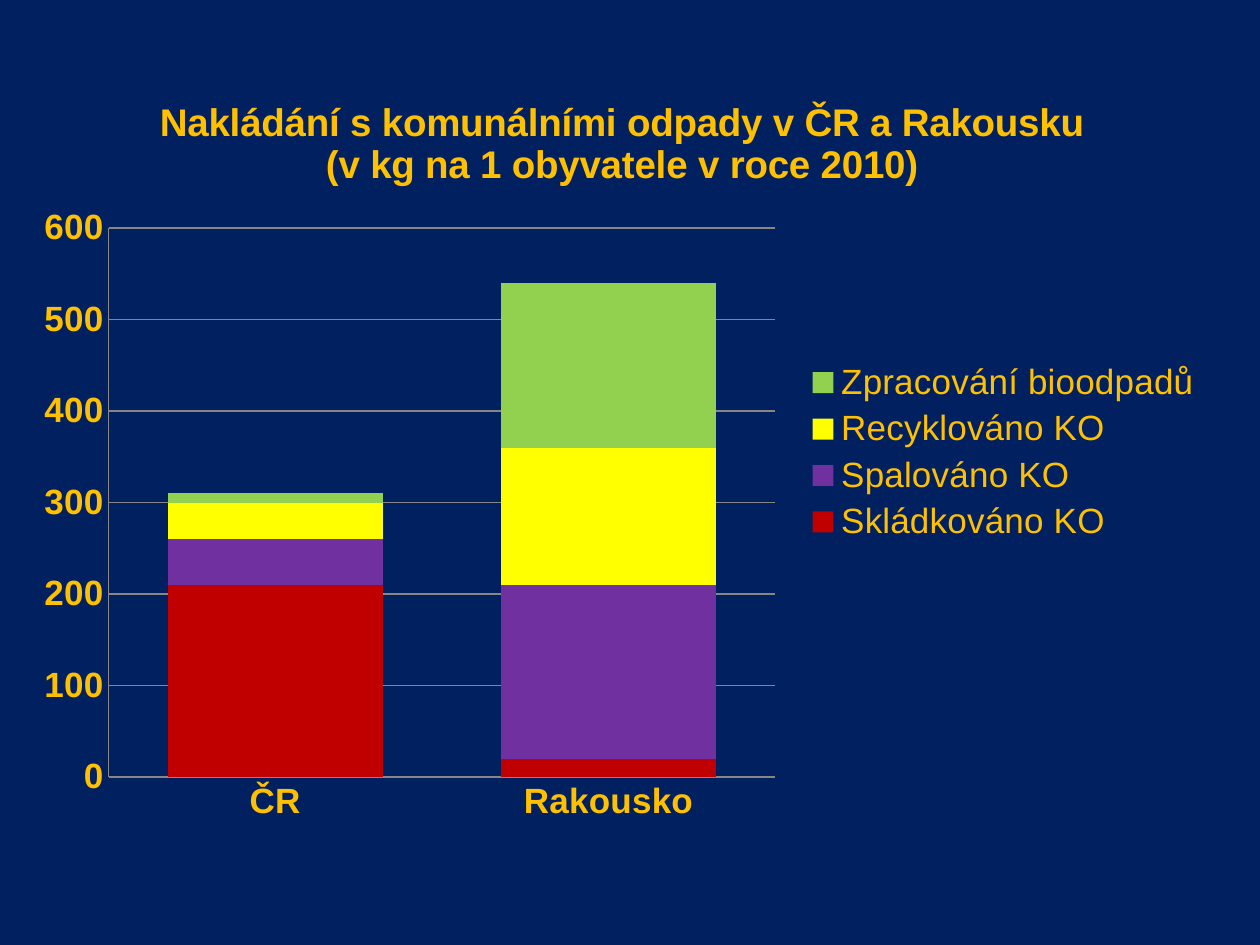
from lxml import etree
from pptx import Presentation
from pptx.chart.data import CategoryChartData
from pptx.dml.color import RGBColor
from pptx.enum.chart import XL_CHART_TYPE as ChartType, XL_LEGEND_POSITION as LegendPosition
from pptx.enum.chart import XL_TICK_MARK as TickMark
from pptx.oxml.ns import qn
from pptx.util import Inches, Pt

NAVY = RGBColor(0x00, 0x20, 0x60)
GOLD = RGBColor(0xFF, 0xC0, 0x00)
GRAY = RGBColor(0x86, 0x86, 0x86)
RED = RGBColor(0xC0, 0x00, 0x00)
PURPLE = RGBColor(0x70, 0x30, 0xA0)
YELLOW = RGBColor(0xFF, 0xFF, 0x00)
GREEN = RGBColor(0x92, 0xD0, 0x50)

TREATMENTS = [
    ("Skládkováno KO", (210, 20), RED),
    ("Spalováno KO", (50, 190), PURPLE),
    ("Recyklováno KO", (40, 150), YELLOW),
    ("Zpracování bioodpadů", (10, 180), GREEN),
]
TITLE_LINES = ["Nakládání s komunálními odpady v ČR a Rakousku", "(v kg na 1 obyvatele v roce 2010)"]


def style_font(font, size, bold):
    font.name = "Arial"
    font.size = Pt(size)
    font.bold = bold
    font.color.rgb = GOLD


def set_layout(parent, position, **settings):
    layout = parent.find(qn("c:layout"))
    if layout is None:
        layout = etree.Element(qn("c:layout"))
        parent.insert(position, layout)
    manual = etree.SubElement(layout, qn("c:manualLayout"))
    for tag, value in settings.items():
        etree.SubElement(manual, qn(f"c:{tag}")).set("val", str(value))


deck = Presentation()
deck.slide_width, deck.slide_height = Inches(10), Inches(7.5)
page = deck.slides.add_slide(deck.slide_layouts[6])
page.background.fill.solid()
page.background.fill.fore_color.rgb = NAVY

data = CategoryChartData()
data.categories = ["ČR", "Rakousko"]
for name, values, color in TREATMENTS:
    data.add_series(name, values)
chart = page.shapes.add_chart(
    ChartType.COLUMN_STACKED, Inches(0.2), Inches(0.52), Inches(9.45), Inches(6.14), data
).chart
style_font(chart.font, 10, False)

title_frame = chart.chart_title.text_frame
title_frame.text = "\n".join(TITLE_LINES)
for para in title_frame.paragraphs:
    for span in para.runs:
        style_font(span.font, 22, True)
chart_root = chart.element.find(qn("c:chart"))
set_layout(chart_root.find(qn("c:title")), 1, xMode="edge", yMode="edge", x=0.11, y=0.04)

plot = chart.plots[0]
plot.gap_width = 55
plot.overlap = 100
plot.vary_by_categories = False
for series, (name, values, color) in zip(plot.series, TREATMENTS):
    series.format.fill.solid()
    series.format.fill.fore_color.rgb = color

for axis in (chart.category_axis, chart.value_axis):
    axis.major_tick_mark = axis.minor_tick_mark = TickMark.NONE
    axis.format.line.color.rgb = GRAY
    axis.format.line.width = Pt(0.75)
    style_font(axis.tick_labels.font, 20, True)
chart.value_axis.minimum_scale = 0
chart.value_axis.maximum_scale = 600
chart.value_axis.major_unit = 100
gridline = chart.value_axis.major_gridlines.format.line
gridline.color.rgb = GRAY
gridline.width = Pt(0.75)

chart.has_legend = True
chart.legend.position = LegendPosition.RIGHT
chart.legend.include_in_layout = False
style_font(chart.legend.font, 20, False)

set_layout(
    chart_root.find(qn("c:plotArea")), 0,
    layoutTarget="inner", xMode="edge", yMode="edge", x=0.07, y=0.21, w=0.56, h=0.71,
)

deck.save("out.pptx")
